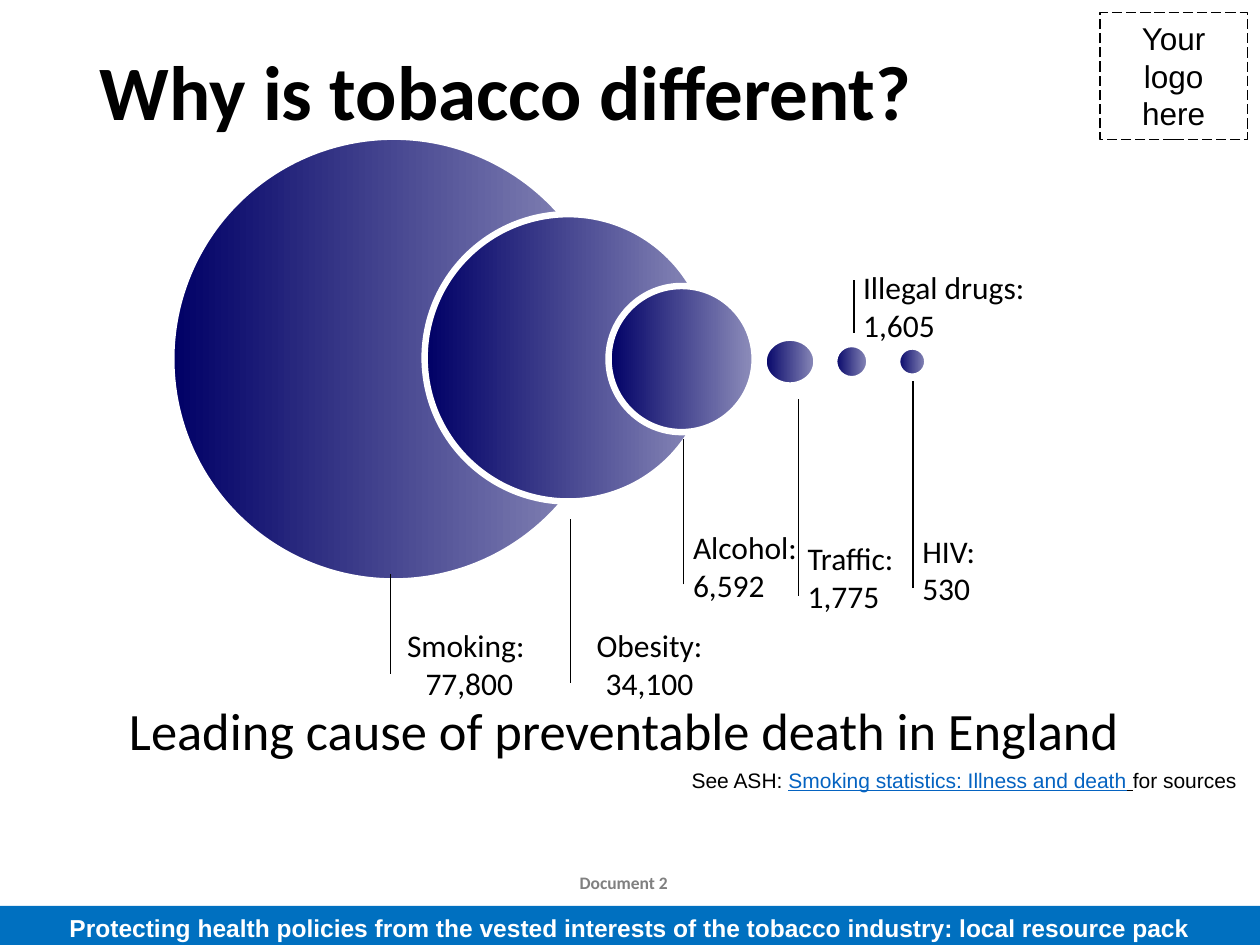
from collections import namedtuple

from pptx import Presentation
from pptx.dml.color import RGBColor
from pptx.enum.dml import MSO_LINE
from pptx.enum.shapes import MSO_SHAPE
from pptx.enum.text import MSO_ANCHOR, MSO_AUTO_SIZE, PP_ALIGN
from pptx.util import Inches, Pt

COLORS = {
    "black": "000000",
    "white": "FFFFFF",
    "banner": "0070C0",
    "footer": "808080",
    "link": "0563C1",
    "navy": "000066",
    "lilac": "8E8EBB",
}
Box = namedtuple("Box", "left top width height")

CIRCLES = [
    (0, 1.77, 3.53, 3.53),
    (2.01, 1.76, 2.28, 2.28),
    (3.47, 1.77, 1.16, 1.16),
    (4.7, 1.79, 0.42, 0.38),
    (5.26, 1.79, 0.28, 0.28),
    (5.76, 1.79, 0.24, 0.24),
]
CALLOUTS = [
    ("Obesity: 34,100", Box(3.24, 3.89, 1.11, 0.56), 0.8, -1.52, True, True),
    ("Smoking: \v77,800", Box(1.81, 3.89, 1.11, 0.49), 0.77, -0.85, True, True),
    ("Alcohol: 6,592", Box(4.14, 3.11, 0.91, 0.56), 0.8, -1.26, False, True),
    ("Illegal drugs: 1,605", Box(5.49, 1.05, 1.41, 0.64), 0.8, 0.15, False, False),
    ("HIV: \v530", Box(5.96, 3.14, 0.87, 0.56), 0.8, -2.14, False, True),
    ("Traffic:\n1,775", Box(5.05, 3.2, 1.04, 0.56), 0.8, -1.99, False, False),
]
LEADER_GAP = 0.073


def color(name):
    return RGBColor.from_string(COLORS[name])


def inches(box):
    return [Inches(length) for length in box]


def style(span, size, font="Calibri", tone="black", bold=False):
    span.font.size = Pt(size)
    span.font.name = font
    span.font.bold = bold
    span.font.color.rgb = color(tone)


def write(shape, text, align, size, **look):
    frame = shape.text_frame
    frame.text = text
    for para in frame.paragraphs:
        para.alignment = align
        for span in para.runs:
            style(span, size, **look)
    return frame


def add_shape(page, kind, box, fill=None, line=None, weight=0.75):
    shape = page.shapes.add_shape(kind, *inches(box))
    shape.shadow.inherit = False
    if fill:
        shape.fill.solid()
        shape.fill.fore_color.rgb = color(fill)
    else:
        shape.fill.background()
    if line:
        shape.line.color.rgb = color(line)
        shape.line.width = Pt(weight)
    else:
        shape.line.fill.background()
    return shape


def add_label(page, box, text, size, **look):
    label = page.shapes.add_textbox(*inches(box))
    write(label, text, PP_ALIGN.CENTER, size, **look).word_wrap = True


def add_banner(page, box):
    banner = add_shape(page, MSO_SHAPE.RECTANGLE, box, fill="banner")
    frame = write(
        banner,
        "Protecting health policies from the vested interests of the tobacco industry: local resource pack",
        PP_ALIGN.CENTER, 14, font="Arial", tone="white", bold=True,
    )
    frame.word_wrap = False
    frame.vertical_anchor = MSO_ANCHOR.MIDDLE


def add_logo_space(page, box):
    space = add_shape(page, MSO_SHAPE.RECTANGLE, box, line="black")
    space.line.dash_style = MSO_LINE.LONG_DASH
    frame = write(space, "Your logo here", PP_ALIGN.CENTER, 18, font="Arial")
    frame.vertical_anchor = MSO_ANCHOR.TOP


def add_circles(page, box):
    for left, axis, width, height in CIRCLES:
        place = Box(box.left + left, box.top + axis - height / 2, width, height)
        circle = add_shape(page, MSO_SHAPE.OVAL, place, line="white", weight=3.69)
        circle.fill.gradient()
        circle.fill.gradient_angle = 0
        for stop, tone in zip(circle.fill.gradient_stops, ("navy", "lilac")):
            stop.color.rgb = color(tone)


def add_callouts(page, box):
    for text, spot, start, end, centred, filled in CALLOUTS:
        place = spot._replace(left=box.left + spot.left, top=box.top + spot.top)
        callout = add_shape(page, MSO_SHAPE.LINE_CALLOUT_1_NO_BORDER, place,
                            fill="white" if filled else None, line="black")
        side = -LEADER_GAP / spot.width
        for index, value in enumerate((start, side, end, side)):
            callout.adjustments[index] = value
        frame = write(callout, text, PP_ALIGN.CENTER if centred else PP_ALIGN.LEFT, 18)
        frame.vertical_anchor = MSO_ANCHOR.TOP
        frame.margin_left = frame.margin_right = 0
        frame.margin_top = frame.margin_bottom = 0


def add_source(page, box):
    source = page.shapes.add_textbox(*inches(box))
    source.text_frame.word_wrap = False
    para = source.text_frame.paragraphs[0]
    for text, tone, underlined in (
        ("See ASH: ", "black", False),
        ("Smoking statistics: Illness and death", "link", True),
        (" ", "black", True),
        ("for sources", "black", False),
    ):
        span = para.add_run()
        span.text = text
        style(span, 12, font="Arial", tone=tone)
        span.font.underline = underlined


def place_title(page, box):
    title = page.shapes.title
    title.left, title.top, title.width, title.height = inches(box)
    frame = write(title, "Why is tobacco different?\v", PP_ALIGN.LEFT, 44, bold=True)
    frame.word_wrap = True
    frame.auto_size = MSO_AUTO_SIZE.NONE
    frame.vertical_anchor = MSO_ANCHOR.MIDDLE
    para = frame.paragraphs[0]
    para.line_spacing = 0.9
    para.font.size = Pt(44)


def main():
    deck = Presentation()
    deck.slide_width, deck.slide_height = Inches(10), Inches(7.5)
    page = deck.slides.add_slide(deck.slide_layouts[5])
    chart = Box(1.36, 1.08, 6.9, 4.45)
    add_banner(page, Box(0, 7.19, 10, 0.35))
    add_label(page, Box(1.3, 6.87, 7.3, 0.27), "Document 2", 10, tone="footer", bold=True)
    add_logo_space(page, Box(8.73, 0.1, 1.17, 1.01))
    add_circles(page, chart)
    add_callouts(page, chart)
    add_label(page, Box(0, 5.49, 10, 0.68), "Leading cause of preventable death in England ", 30)
    add_source(page, Box(5.39, 6.04, 4.61, 0.3))
    place_title(page, Box(0.69, 0.4, 7.92, 1.45))
    deck.save("out.pptx")


if __name__ == "__main__":
    main()
